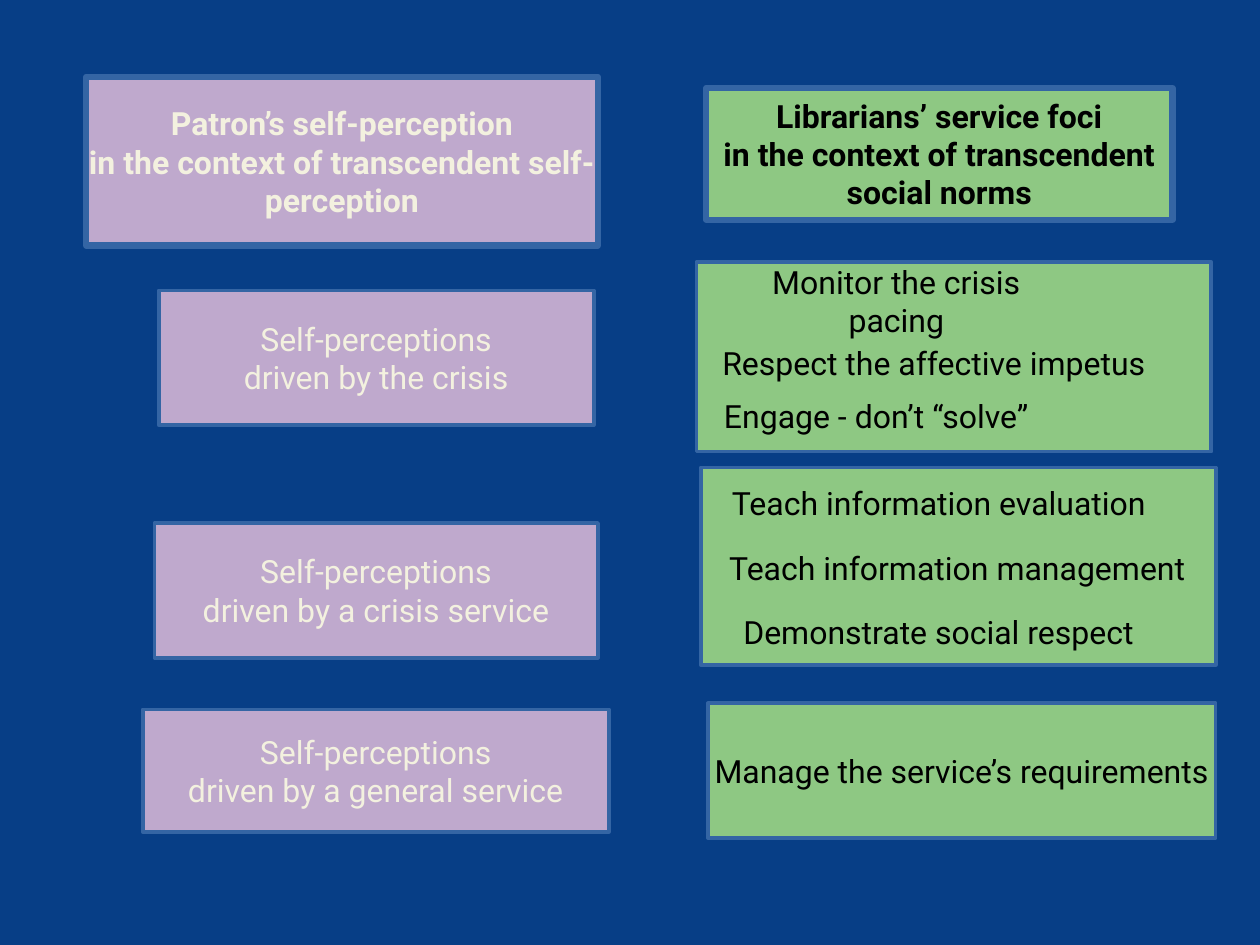
from pptx import Presentation
from pptx.dml.color import RGBColor
from pptx.enum.shapes import MSO_SHAPE
from pptx.enum.text import MSO_ANCHOR, PP_ALIGN
from pptx.util import Pt

COLORS = {"back": "073E86", "edge": "3465A4", "lilac": "BFA9CD",
          "cream": "F3F1DF", "green": "8EC883", "black": "000000"}
FONT, SIZE = "Roboto", 26
HEAD_EDGE, BOX_EDGE = 5, 3

# Each box: (left, top, width, height), lines of text
HEADS = [
    ("lilac", (70, 62.5, 416, 137),
     ["Patron’s self-perception",
      "in the context of transcendent self-perception"]),
    ("green", (574, 71.5, 379, 107),
     ["Librarians’ service foci",
      "in the context of transcendent social norms"]),
]
PATRON = [
    ((129, 236, 353.5, 109.5), "driven by the crisis"),
    ((125.5, 425, 360.5, 109.5), "driven by a crisis service"),
    ((116, 576.5, 379, 99.5), "driven by a general service"),
]
FOCI = [
    ((566, 213, 418.5, 154), []),
    ((569.5, 380, 418.5, 160.5), []),
    ((575.5, 571.5, 412.5, 109.5), ["Manage the service’s requirements"]),
]
TASKS = [
    ((586, 216.5, 285, 56), "Monitor the crisis pacing", PP_ALIGN.CENTER),
    ((587, 276, 353.5, 37.5), "Respect the affective impetus", PP_ALIGN.LEFT),
    ((588, 315.5, 248.5, 44.5), "Engage - don’t “solve”", PP_ALIGN.CENTER),
    ((583, 392.5, 360.5, 31.5), "Teach information evaluation", PP_ALIGN.CENTER),
    ((581, 437, 394.5, 48), "Teach information management", PP_ALIGN.CENTER),
    ((595.5, 489.5, 335, 48), "Demonstrate social respect", PP_ALIGN.CENTER),
]
INK = {"lilac": "cream", "green": "black"}


def color(name):
    return RGBColor.from_string(COLORS[name])


def add_box(slide, place, fill, lines, edge=0, bold=False, align=PP_ALIGN.CENTER):
    box = slide.shapes.add_shape(MSO_SHAPE.RECTANGLE, *map(Pt, place))
    box.shadow.inherit = False
    box.fill.solid()
    box.fill.fore_color.rgb = color(fill)
    if edge:
        box.line.color.rgb = color("edge")
        box.line.width = Pt(edge)
    else:
        box.line.fill.background()

    frame = box.text_frame
    frame.word_wrap = True
    frame.vertical_anchor = MSO_ANCHOR.MIDDLE
    frame.margin_left = frame.margin_right = Pt(0)
    frame.margin_top = frame.margin_bottom = Pt(0)
    for i, line in enumerate(lines):
        para = frame.add_paragraph() if i else frame.paragraphs[0]
        para.alignment = align
        run = para.add_run()
        run.text = line
        run.font.name = FONT
        run.font.size = Pt(SIZE)
        run.font.bold = bold
        run.font.color.rgb = color(INK[fill])


def main():
    deck = Presentation()
    deck.slide_width, deck.slide_height = Pt(1024), Pt(768)
    slide = deck.slides.add_slide(deck.slide_layouts[6])
    slide.background.fill.solid()
    slide.background.fill.fore_color.rgb = color("back")

    # Column headings
    for fill, place, lines in HEADS:
        add_box(slide, place, fill, lines, HEAD_EDGE, bold=True)

    # Patron column
    for place, cause in PATRON:
        add_box(slide, place, "lilac", ["Self-perceptions", cause], BOX_EDGE)

    # Librarian column: panels, then the tasks on them
    for place, lines in FOCI:
        add_box(slide, place, "green", lines, BOX_EDGE)
    for place, task, align in TASKS:
        add_box(slide, place, "green", [task], align=align)

    deck.save("out.pptx")


if __name__ == "__main__":
    main()
